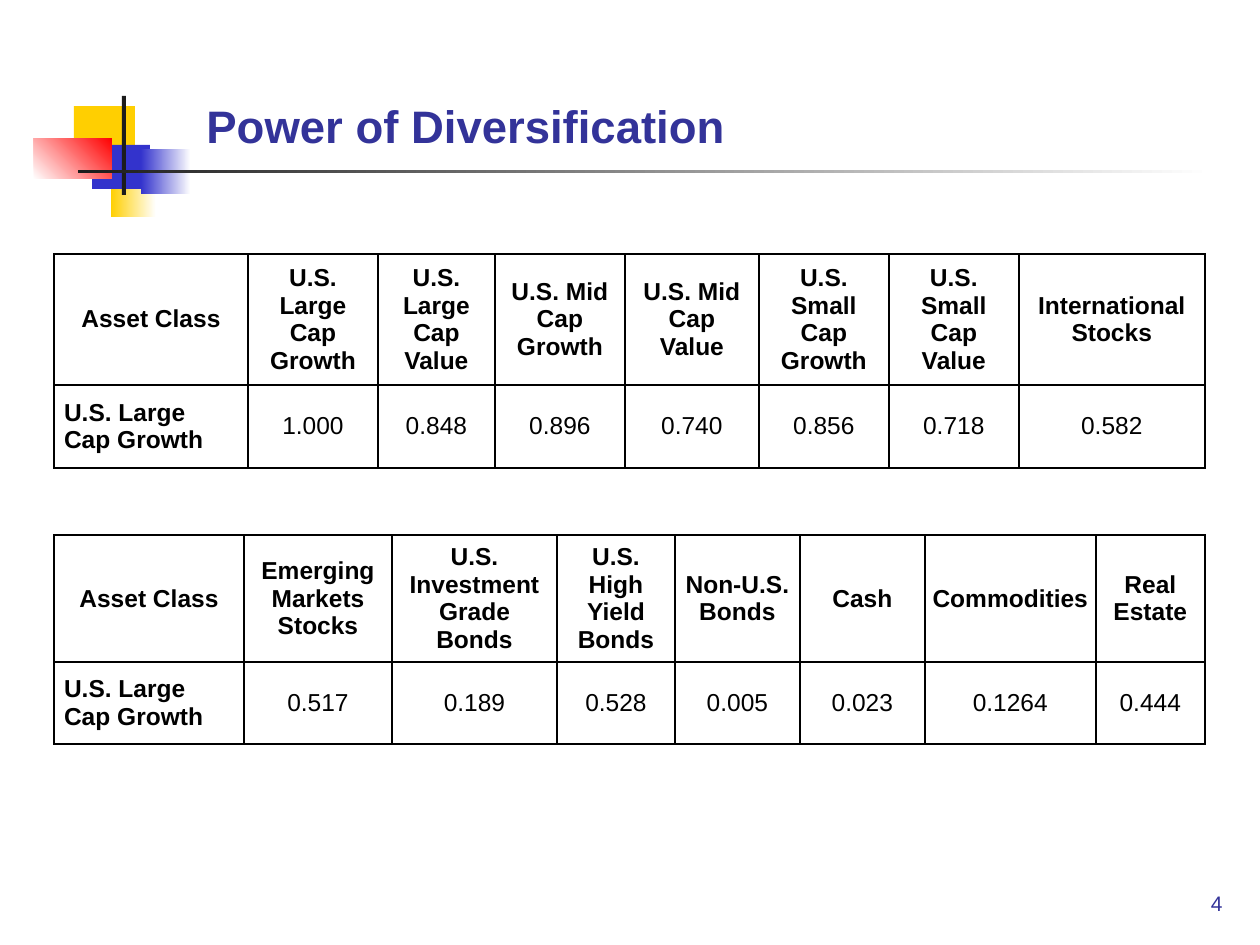
from lxml import etree
from pptx import Presentation
from pptx.dml.color import RGBColor
from pptx.enum.shapes import MSO_SHAPE
from pptx.enum.text import MSO_ANCHOR, PP_ALIGN
from pptx.oxml.ns import qn
from pptx.util import Emu, Pt

RECT = MSO_SHAPE.RECTANGLE
LEFT, CENTER, RIGHT = PP_ALIGN.LEFT, PP_ALIGN.CENTER, PP_ALIGN.RIGHT
BOTTOM, MIDDLE = MSO_ANCHOR.BOTTOM, MSO_ANCHOR.MIDDLE

WHITE = RGBColor(0xFF, 0xFF, 0xFF)
BLACK = RGBColor(0x00, 0x00, 0x00)
YELLOW = RGBColor(0xFF, 0xCF, 0x01)
BLUE = RGBColor(0x33, 0x33, 0xCC)
RED = RGBColor(0xFF, 0x00, 0x00)
DARK = RGBColor(0x1C, 0x1C, 0x1C)
NAVY = RGBColor(0x33, 0x33, 0x99)

FONT = "Arial"
PX = 914400 / 126
CELL_INDENT = 10
TABLE_LEFT = 54

# box (left, top, width, height), colours (one is solid, two a gradient), angle
ORNAMENT = [
    ((111, 151, 45, 66), (YELLOW, WHITE), 0),
    ((74, 106, 61, 44), (YELLOW,), 0),
    ((92, 145, 58, 44), (BLUE,), 0),
    ((141, 149, 50, 45), (BLUE, WHITE), 0),
    ((34, 138, 78, 41), (WHITE, RED), 45),
    ((122, 96, 4, 99), (DARK,), 0),
    ((78, 170, 1134, 3), (DARK, WHITE), 0),
]

# box, text, size, bold, alignment
LABELS = [
    ((194, 96, 576, 63), "Power of Diversification", 26, True, LEFT),
    ((948, 859, 287, 63), "4", 12, False, RIGHT),
]

TABLES = [
    {
        "top": 254,
        "cols": [194, 130, 117, 130, 134, 130, 130, 186],
        "rows": [131, 83],
        "cells": [
            ["Asset Class", "U.S. Large Cap Growth", "U.S. Large Cap Value",
             "U.S. Mid Cap Growth", "U.S. Mid Cap Value",
             "U.S. Small Cap Growth", "U.S. Small Cap Value",
             "International Stocks"],
            ["U.S. Large Cap Growth", "1.000", "0.848", "0.896", "0.740",
             "0.856", "0.718", "0.582"],
        ],
        "flush_cols": [],
    },
    {
        "top": 535,
        "cols": [190, 148, 165, 118, 125, 125, 171, 109],
        "rows": [127, 82],
        "cells": [
            ["Asset Class", "Emerging Markets Stocks",
             "U.S. Investment Grade Bonds", "U.S. High Yield Bonds",
             "Non-U.S. Bonds", "Cash", "Commodities", "Real Estate"],
            ["U.S. Large Cap Growth", "0.517", "0.189", "0.528", "0.005",
             "0.023", "0.1264", "0.444"],
        ],
        "flush_cols": [6],
    },
]


def px(n):
    return Emu(round(n * PX))


def add_block(s, box, colours, angle):
    sp = s.shapes.add_shape(RECT, *map(px, box))
    sp.shadow.inherit = False
    sp.line.fill.background()
    if len(colours) == 1:
        sp.fill.solid()
        sp.fill.fore_color.rgb = colours[0]
        return
    sp.fill.gradient()
    sp.fill.gradient_angle = angle
    for stop, colour in zip(sp.fill.gradient_stops, colours):
        stop.color.rgb = colour


def write(tf, text, size, bold, colour, align):
    p = tf.paragraphs[0]
    p.alignment = align
    r = p.add_run()
    r.text = text
    r.font.name = FONT
    r.font.size = Pt(size)
    r.font.bold = bold
    r.font.color.rgb = colour
    return p


def add_label(s, box, text, size, bold, align):
    tf = s.shapes.add_textbox(*map(px, box)).text_frame
    tf.word_wrap = True
    tf.vertical_anchor = BOTTOM
    write(tf, text, size, bold, NAVY, align)


def add_borders(cell):
    tcPr = cell._tc.get_or_add_tcPr()
    for side in ("lnL", "lnR", "lnT", "lnB"):
        ln = etree.SubElement(tcPr, qn(f"a:{side}"), w=str(Pt(1)))
        fill = etree.SubElement(ln, qn("a:solidFill"))
        etree.SubElement(fill, qn("a:srgbClr"), val=str(BLACK))


def add_grid(s, top, cols, rows, cells, flush_cols):
    """Add a bordered table; cells in flush_cols and the corner get no indent."""
    box = (TABLE_LEFT, top, sum(cols), sum(rows))
    table = s.shapes.add_table(len(rows), len(cols), *map(px, box)).table
    table.first_row = table.horz_banding = False
    for col, width in zip(table.columns, cols):
        col.width = px(width)
    for i, (height, texts) in enumerate(zip(rows, cells)):
        table.rows[i].height = px(height)
        for j, text in enumerate(texts):
            cell = table.cell(i, j)
            cell.margin_left = cell.margin_right = 0
            cell.margin_top = cell.margin_bottom = 0
            cell.vertical_anchor = MIDDLE
            add_borders(cell)
            cell.fill.background()
            is_row_label = i > 0 and j == 0
            p = write(cell.text_frame, text, 14, i == 0 or j == 0, BLACK,
                      LEFT if is_row_label else CENTER)
            if (i, j) != (0, 0) and j not in flush_cols:
                pPr = p._p.get_or_add_pPr()
                for side in ("marL", "marR"):
                    pPr.set(side, str(px(CELL_INDENT)))
                pPr.set("indent", "0")


def main():
    prs = Presentation()
    prs.slide_width, prs.slide_height = px(1260), px(945)
    s = prs.slides.add_slide(prs.slide_layouts[6])
    for block in ORNAMENT:
        add_block(s, *block)
    for label in LABELS:
        add_label(s, *label)
    for grid in TABLES:
        add_grid(s, **grid)
    prs.save("out.pptx")


if __name__ == "__main__":
    main()
